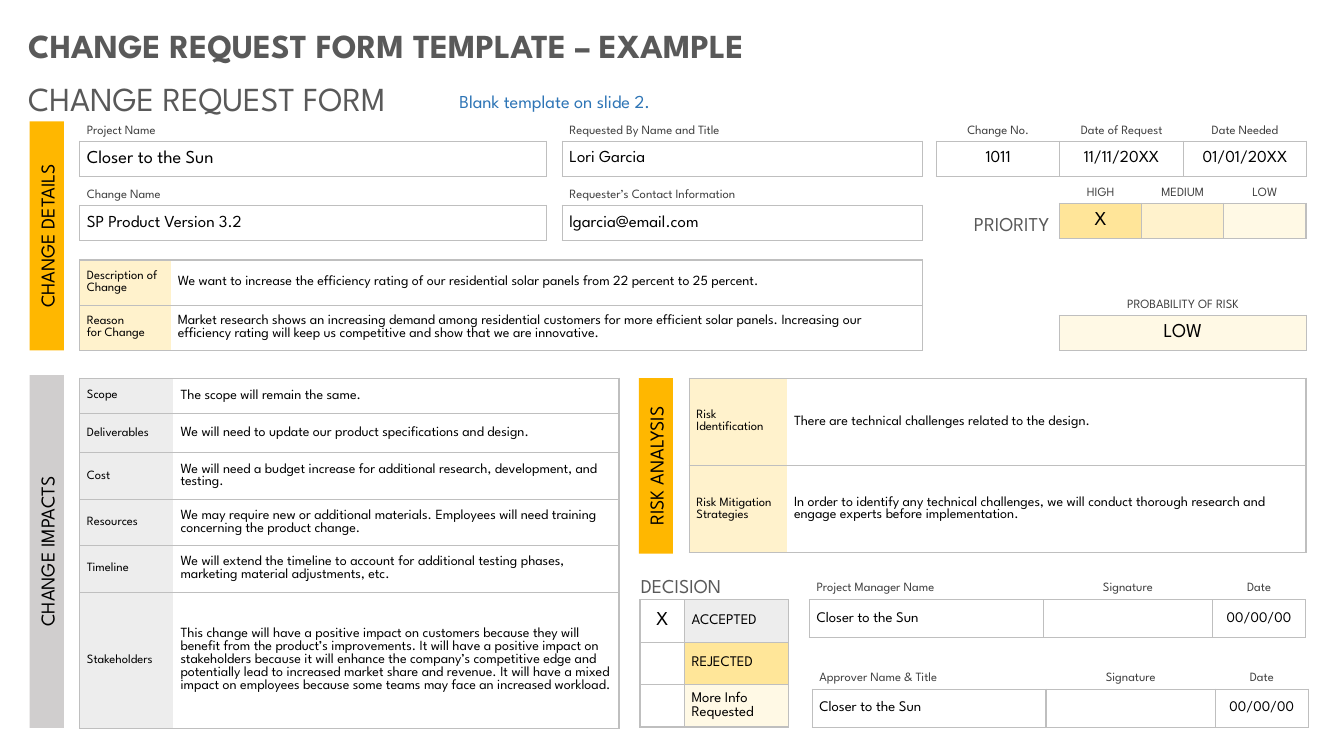
from lxml import etree
from pptx import Presentation, util as u
from pptx.dml.color import RGBColor
from pptx.enum import shapes, text
from pptx.oxml import ns

Cm, hue = u.Cm, RGBColor.from_string
LEFT, MID, RIGHT = text.PP_ALIGN.LEFT, text.PP_ALIGN.CENTER, text.PP_ALIGN.RIGHT
BLACK, DARK, GREY, WHITE = "000000", "404040", "595959", "FFFFFF"
GOLD, CREAM, PALE, LIGHT = "FFE599", "FFF2CC", "FFF9E5", "EDEDED"
PLAIN = "{2D5ABB26-0587-4C30-8999-92F81FD0307C}"


def write(frame, words, size, tone, align=LEFT, bold=False, gap=1.0):
    frame.word_wrap = True
    for n, line in enumerate(words.split("\n")):
        para = frame.add_paragraph() if n else frame.paragraphs[0]
        para.alignment, para.line_spacing = align, gap
        run = para.add_run()
        run.text = line
        style = {"name": "League Spartan", "size": u.Pt(size), "bold": bold}
        for key, val in style.items():
            setattr(run.font, key, val)
        run.font.color.rgb = hue(tone)


def grid(x, y, cols, rows, cells):
    """Draw a table; a cell is (words, size, tone, align, fill, border sides)."""
    tab = slide.shapes.add_table(len(rows), len(cols), Cm(x), Cm(y),
                                 Cm(sum(cols)), Cm(sum(rows))).table
    tab.first_row = tab.horz_banding = False
    tab._tbl.tblPr[0].text = PLAIN
    for col, wide in zip(tab.columns, cols):
        col.width = Cm(wide)
    for row, high in zip(tab.rows, rows):
        row.height = Cm(high)
    for cell, (words, size, tone, align, fill, sides) in zip(tab.iter_cells(), cells):
        cell.vertical_anchor = text.MSO_ANCHOR.MIDDLE
        cell.margin_left = cell.margin_right = Cm(0.18)
        cell.margin_top = cell.margin_bottom = 0
        for side in sides:
            edge = etree.SubElement(cell._tc.get_or_add_tcPr(), ns.qn(f"a:ln{side}"), w="12700")
            paint = etree.SubElement(edge, ns.qn("a:solidFill"))
            etree.SubElement(paint, ns.qn("a:srgbClr"), val="BFBFBF")
        if fill:
            cell.fill.solid()
            cell.fill.fore_color.rgb = hue(fill)
        if words:
            write(cell.text_frame, words, size, tone, align)


deck = Presentation()
deck.slide_width, deck.slide_height = Cm(33.87), Cm(19.05)
slide = deck.slides.add_slide(deck.slide_layouts[6])

# Headings: x, y, width, height, words, size, tone, align, bold, line spacing
for x, y, wide, high, *look in [
    (0.46, 0.51, 23.19, 1.27, "CHANGE REQUEST FORM TEMPLATE – EXAMPLE", 24, GREY, LEFT, True),
    (11.33, 2.16, 6.38, 0.81, "Blank template on slide 2.", 13, "2E75B6"),
    (0.46, 1.68, 10.87, 1.35, "CHANGE REQUEST FORM", 24, GREY, LEFT, False, 1.15),
    (23.6, 5.13, 3.1, 0.89, "PRIORITY", 14, GREY, RIGHT, False, 1.15),
    (15.9, 14.25, 3.1, 0.89, "DECISION", 14, GREY, LEFT, False, 1.15),
]:
    box = slide.shapes.add_textbox(Cm(x), Cm(y), Cm(wide), Cm(high))
    write(box.text_frame, *look)

# Upright section bars: left, top, length as they stand on the slide
thick = 0.86
for x, y, long, words, fill in [
    (0.75, 3.06, 5.77, "CHANGE DETAILS", "FFB700"),
    (0.75, 9.45, 8.89, "CHANGE IMPACTS", "D0CECE"),
    (16.1, 9.53, 4.42, "RISK ANALYSIS", "FFB700"),
]:
    half = (long - thick) / 2
    bar = slide.shapes.add_shape(shapes.MSO_SHAPE.RECTANGLE, Cm(x - half), Cm(y + half),
                                 Cm(long), Cm(thick))
    bar.rotation = 270
    bar.shadow.inherit = False
    bar.fill.solid()
    bar.fill.fore_color.rgb = hue(fill)
    bar.line.fill.background()
    bar.text_frame.vertical_anchor = text.MSO_ANCHOR.MIDDLE
    write(bar.text_frame, words, 14, BLACK, MID)

# Fields with captions: x, y, columns, rows, value size, (caption, value, align, fill)
slim, tall = (0.51, 0.89), (0.56, 0.96)
sign = [("Signature", "", MID, WHITE), ("Date", "00/00/00", MID, WHITE)]
for x, y, cols, rows, size, fields in [
    (2.01, 3.05, [11.76], slim, 13, [("Project Name", "Closer to the Sun", LEFT, WHITE)]),
    (2.01, 4.67, [11.76], slim, 12, [("Change Name", "SP Product Version 3.2", LEFT, WHITE)]),
    (14.17, 3.05, [9.07], slim, 12,
     [("Requested By Name and Title", "Lori Garcia", LEFT, WHITE)]),
    (14.17, 4.67, [9.07], slim, 12,
     [("Requester’s Contact Information", "lgarcia@email.com", LEFT, WHITE)]),
    (23.6, 3.05, [3.11] * 3, slim, 12,
     [("Change No.", "1011", MID, WHITE), ("Date of Request", "11/11/20XX", MID, WHITE),
      ("Date Needed", "01/01/20XX", MID, WHITE)]),
    (26.7, 4.62, [2.07] * 3, slim, 14,
     [("HIGH", "X", MID, GOLD), ("MEDIUM", "", MID, CREAM), ("LOW", "", MID, PALE)]),
    (26.7, 7.44, [6.22], slim, 14, [("PROBABILITY OF RISK", "LOW", MID, PALE)]),
    (20.4, 14.55, [5.89, 4.27, 2.34], tall, 10.5,
     [("Project Manager Name", "Closer to the Sun", LEFT, WHITE)] + sign),
    (20.47, 16.81, [5.89, 4.27, 2.34], tall, 10.5,
     [("Approver Name & Title", "Closer to the Sun", LEFT, WHITE)] + sign),
]:
    heads = [(cap, 9, DARK, align, None, "B") for cap, _, align, _ in fields]
    vals = [(val, size, BLACK, align, fill, "LRTB") for _, val, align, fill in fields]
    grid(x, y, cols, rows, heads + vals)

# Labelled notes: x, y, columns, rows, label fill, (label, note)
for x, y, cols, rows, fill, notes in [
    (2.01, 6.55, [2.29, 18.95], [1.14] * 2, CREAM, [
        ("Description of Change", "We want to increase the efficiency rating of our residential "
         "solar panels from 22 percent to 25 percent."),
        ("Reason\nfor Change", "Market research shows an increasing demand among residential "
         "customers for more efficient solar panels. Increasing our efficiency rating will keep "
         "us competitive and show that we are innovative."),
    ]),
    (2.01, 9.53, [2.36, 11.23], [0.89, 0.99, 1.17, 1.17, 1.17, 3.43], LIGHT, [
        ("Scope", "The scope will remain the same."),
        ("Deliverables", "We will need to update our product specifications and design."),
        ("Cost", "We will need a budget increase for additional research, development, "
         "and testing."),
        ("Resources", "We may require new or additional materials. Employees will need training "
         "concerning the product change."),
        ("Timeline", "We will extend the timeline to account for additional testing phases, "
         "marketing material adjustments, etc."),
        ("Stakeholders", "This change will have a positive impact on customers because they will "
         "benefit from the product’s improvements. It will have a positive impact on stakeholders "
         "because it will enhance the company’s competitive edge and potentially lead to "
         "increased market share and revenue. It will have a mixed impact on employees because "
         "some teams may face an increased workload."),
    ]),
    (17.37, 9.53, [2.46, 13.08], [2.2] * 2, CREAM, [
        ("Risk Identification", "There are technical challenges related to the design."),
        ("Risk Mitigation Strategies", "In order to identify any technical challenges, we will "
         "conduct thorough research and engage experts before implementation."),
    ]),
]:
    cells = []
    for label, note in notes:
        cells += [(label, 9, BLACK, LEFT, fill, "LTB"), (note, 10, BLACK, LEFT, WHITE, "RTB")]
    grid(x, y, cols, rows, cells)

cells = []
for mark, label, fill in [("X", "ACCEPTED", LIGHT), ("", "REJECTED", "FFE699"),
                          ("", "More Info Requested", PALE)]:
    cells += [(mark, 14, BLACK, MID, WHITE, "LRTB"), (label, 10.5, BLACK, LEFT, fill, "LRTB")]
grid(16.13, 15.11, [1.12, 2.62], [1.07] * 3, cells)

deck.save("out.pptx")
